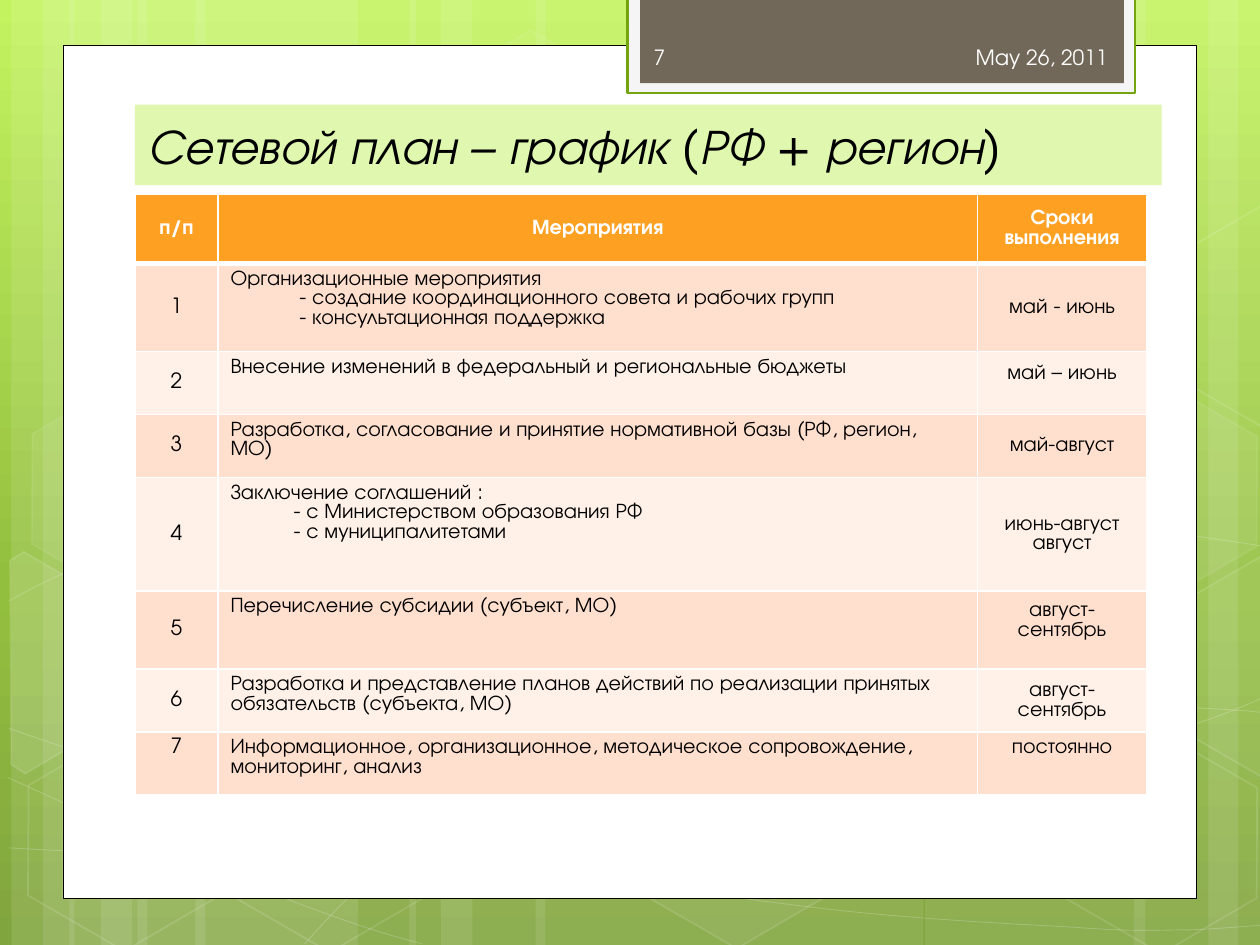
from copy import deepcopy

from lxml.etree import SubElement
from pptx import Presentation
from pptx.dml.color import RGBColor
from pptx.enum.shapes import MSO_SHAPE as SHAPE
from pptx.enum.text import MSO_ANCHOR as ANCHOR, PP_ALIGN as ALIGN
from pptx.oxml.ns import qn
from pptx.util import Inches, Pt

FONT = "TeX Gyre Adventor"
WHITE, BLACK = "FFFFFF", "000000"


def paint(fill, color, alpha=100):
    """Solid fill for a shape, line, font or cell; None means no fill."""
    if color is None:
        fill.background()
        return
    fill.solid()
    fill.fore_color.rgb = RGBColor.from_string(color)
    if alpha < 100:
        clr = fill._xPr.find(".//" + qn("a:srgbClr"))
        SubElement(clr, qn("a:alpha"), val=str(alpha * 1000))


def write(tf, text, size=12, color=BLACK, bold=False, italic=False,
          align=ALIGN.LEFT, anchor=None, indent=0):
    """One paragraph per line; lines after the first may be indented."""
    tf.word_wrap = True
    if anchor is not None:
        tf.vertical_anchor = anchor
    for i, line in enumerate(text.split("\n")):
        p = tf.paragraphs[0] if i == 0 else tf.add_paragraph()
        p.alignment = align
        if i and indent:
            p._p.get_or_add_pPr().set("marL", str(Inches(indent)))
            p._p.get_or_add_pPr().set("indent", "0")
        r = p.add_run()
        r.text = line
        r.font.name, r.font.size = FONT, Pt(size)
        r.font.bold, r.font.italic = bold, italic
        paint(r.font.fill, color)


prs = Presentation()
prs.slide_width, prs.slide_height = Inches(10), Inches(7.5)
s = prs.slides.add_slide(prs.slide_layouts[6])

# Green gradient background, top to bottom
bg = s.background.fill
bg.gradient()
bg.gradient_angle = 270
last = bg.gradient_stops[1]._gs
last.addnext(deepcopy(last))
for stop, (pos, color) in zip(bg.gradient_stops,
                              [(0, "C3F35F"), (0.62, "93BF3F"), (1, "81A53E")]):
    stop.position = pos
    stop.color.rgb = RGBColor.from_string(color)

# Translucent vertical bands: left, width
bands = [(1.09, 1.75), (0.09, 0.5), (0.34, 0.83), (1.55, 1.75), (0.55, 0.5),
         (0.8, 0.83), (7.34, 1.75), (9.59, 0.5), (9, 0.83), (4.25, 3.08),
         (3.25, 0.5), (3.5, 0.83)]
for x, w in bands:
    sp = s.shapes.add_shape(SHAPE.RECTANGLE, Inches(x), 0, Inches(w), Inches(7.5))
    sp.shadow.inherit = False
    paint(sp.fill, WHITE, 10)
    paint(sp.line.fill, None)

# Thin waves: a start point, then pieces that end in a point;
# a piece of six numbers is a cubic curve, one of two a straight line
waves = [
    [(0.07, 6.73), (0.61, 6.76, 1.15, 6.79, 1.9, 6.78),
     (2.65, 6.77, 3.58, 6.75, 4.58, 6.65), (5.58, 6.55, 7, 6.36, 7.92, 6.17),
     (8.83, 5.98, 9.77, 5.68, 10.07, 5.51)],
    [(0.07, 4.77), (0.36, 4.61, 0.65, 4.46, 1.21, 4.31),
     (1.78, 4.16, 2.59, 3.94, 3.47, 3.87), (4.36, 3.8, 5.44, 3.79, 6.54, 3.87),
     (7.64, 3.95, 9.47, 4.26, 10.07, 4.34)],
    [(0.06, 6.17), (1.27, 6.72, 2.47, 7.27, 3.35, 7.49)],
    [(0.07, 5.78), (0.38, 5.89, 0.7, 6, 1.28, 6.16),
     (1.86, 6.31, 2.73, 6.56, 3.57, 6.73), (4.4, 6.9, 5.45, 7.08, 6.28, 7.18),
     (7.11, 7.29, 8, 7.33, 8.53, 7.36), (9.06, 7.4, 9.19, 7.38, 9.45, 7.38),
     (9.71, 7.37, 9.89, 7.35, 10.07, 7.34)],
    [(2.42, 7.49), (2.6, 7.29, 2.78, 7.09, 3.02, 6.91),
     (3.26, 6.72, 3.6, 6.53, 3.88, 6.39), (4.16, 6.25, 4.33, 6.19, 4.69, 6.09),
     (5.06, 5.99, 5.73, 5.85, 6.08, 5.78), (6.44, 5.71, 6.49, 5.71, 6.8, 5.69),
     (7.11, 5.66, 7.6, 5.63, 7.94, 5.62), (8.29, 5.61, 8.86, 5.62, 8.86, 5.62),
     (9.53, 5.62), (9.71, 5.63, 9.88, 5.64, 9.97, 5.65),
     (10.06, 5.66, 10.03, 5.65, 10.06, 5.66)],
]
outlines = [(wave, False, None, 20, 0.5) for wave in waves]

# Hexagons cut by the slide edge: points, closed, fill alpha, line alpha, width
outlines += [
    ([(0.08, 4.45), (0.19, 4.38), (0.96, 4.83), (0.95, 5.7), (0.2, 6.14),
      (0.09, 6.07)], True, 10, 12, 1),
    ([(9.26, 4.85), (10.02, 4.41), (10.09, 4.46), (10.09, 6.13), (10.02, 6.17),
      (9.26, 5.73)], True, 4, 12, 1),
    ([(9.26, 2.07), (10.02, 1.63), (10.1, 1.68), (10.09, 3.35), (10.02, 3.39),
      (9.26, 2.95)], True, None, 12, 1),
]
for pieces, closed, alpha, line_alpha, width in outlines:
    start, *rest = [(Inches(piece[-2]), Inches(piece[-1])) for piece in pieces]
    fb = s.shapes.build_freeform(*start)
    fb.add_line_segments(rest, close=closed)
    sp = fb.convert_to_shape()
    # Turn the lines into curves where a piece has control points
    for seg, piece in zip(list(sp._element.iter(qn("a:lnTo"))), pieces[1:]):
        if len(piece) == 6:
            seg.tag = qn("a:cubicBezTo")
            for i in (2, 0):
                pt = deepcopy(seg[0])
                pt.set("x", str(Inches(piece[i]) - sp.left))
                pt.set("y", str(Inches(piece[i + 1]) - sp.top))
                seg.insert(0, pt)
    sp.shadow.inherit = False
    paint(sp.fill, WHITE if alpha else None, alpha or 100)
    paint(sp.line.fill, WHITE, line_alpha)
    sp.line.width = Pt(width)

# Whole hexagons: left, top, fill alpha, line alpha
hexagons = [(3.34, 0.36, 4, 8), (4.97, 5.89, 6, 12), (0.11, 5.91, None, 12),
            (0.14, 3.12, 7, 8), (1.74, 5.92, None, 12), (7.53, 4.53, 10, 12),
            (8.34, 5.93, None, 12), (8.34, 3.14, 7, 8)]
for x, y, alpha, line_alpha in hexagons:
    sp = s.shapes.add_shape(SHAPE.HEXAGON, Inches(x), Inches(y), Inches(1.75), Inches(1.52))
    sp.adjustments[0] = 0.285
    sp.rotation = 30
    sp.shadow.inherit = False
    paint(sp.fill, WHITE if alpha else None, alpha or 100)
    paint(sp.line.fill, WHITE, line_alpha)
    sp.line.width = Pt(1)

# White page, date tab and title bar; the title bar comes last
panels = [((0.5, 0.36, 9, 6.77), WHITE, BLACK, 0.5),
          ((4.98, -0.02, 4.03, 0.76), "F5F5F5", "74A510", 1.25),
          ((5.08, -0.02, 3.84, 0.68), "71685A", None, 0),
          ((1.07, 0.83, 8.15, 0.64), "DFF7AE", None, 0)]
for box, fill, line, width in panels:
    sp = s.shapes.add_shape(SHAPE.RECTANGLE, *map(Inches, box))
    sp.shadow.inherit = False
    paint(sp.fill, fill)
    paint(sp.line.fill, line)
    if line:
        sp.line.width = Pt(width)
write(sp.text_frame, "Сетевой план – график (РФ + регион)", size=28,
      italic=True, anchor=ANCHOR.MIDDLE)

# Schedule table
rows = [
    ("п/п", "Мероприятия", "Сроки выполнения"),
    ("1", "Организационные мероприятия\n - создание координационного совета "
          "и рабочих групп\n - консультационная поддержка", "май - июнь"),
    ("2", "Внесение изменений в федеральный и региональные бюджеты", "май – июнь"),
    ("3", "Разработка, согласование и принятие нормативной базы (РФ, регион, МО)",
     "май-август"),
    ("4", "Заключение соглашений :\n- с Министерством образования РФ\n"
          "- с муниципалитетами", "июнь-август\nавгуст"),
    ("5", "Перечисление субсидии (субъект, МО)", "август-сентябрь"),
    ("6", "Разработка и представление планов действий по реализации принятых "
          "обязательств (субъекта, МО)", "август-сентябрь"),
    ("7", "Информационное, организационное, методическое сопровождение, "
          "мониторинг, анализ", "постоянно"),
]
heights = [0.55, 0.7, 0.5, 0.5, 0.9, 0.62, 0.5, 0.5]
tbl = s.shapes.add_table(len(rows), 3, Inches(1.07), Inches(1.54),
                         Inches(8.03), Inches(sum(heights))).table
for col, w in zip(tbl.columns, (0.66, 6.03, 1.34)):
    col.width = Inches(w)
for i, (texts, h) in enumerate(zip(rows, heights)):
    tbl.rows[i].height = Inches(h)
    for j, text in enumerate(texts):
        cell = tbl.cell(i, j)
        tcPr = cell._tc.get_or_add_tcPr()
        for side in "LRTB":
            thick = (i, side) in ((0, "B"), (1, "T"))
            ln = SubElement(tcPr, qn("a:ln" + side), w=str(Pt(3 if thick else 1)))
            SubElement(SubElement(ln, qn("a:solidFill")), qn("a:srgbClr"), val=WHITE)
        paint(cell.fill, "FEA022" if i == 0 else ("FFF0E8", "FFDFCD")[i % 2])
        task = i > 0 and j == 1
        cell.vertical_anchor = ANCHOR.TOP if task or i == 7 else ANCHOR.MIDDLE
        if j == 2 and i in (2, 5):  # these dates sit a little above the middle
            cell.margin_bottom = Inches(0.2)
        write(cell.text_frame, text, bold=i == 0, color=BLACK if i else WHITE,
              align=ALIGN.LEFT if task else ALIGN.CENTER, indent=0.5 if task else 0)

# Date and slide number
for x, w, text, align in [(6.56, 2.33, "May 26, 2011", ALIGN.RIGHT),
                          (5.09, 1.46, "7", ALIGN.LEFT)]:
    tb = s.shapes.add_textbox(Inches(x), Inches(0.25), Inches(w), Inches(0.4))
    write(tb.text_frame, text, color="FEFEFE", align=align, anchor=ANCHOR.MIDDLE)

prs.save("out.pptx")
